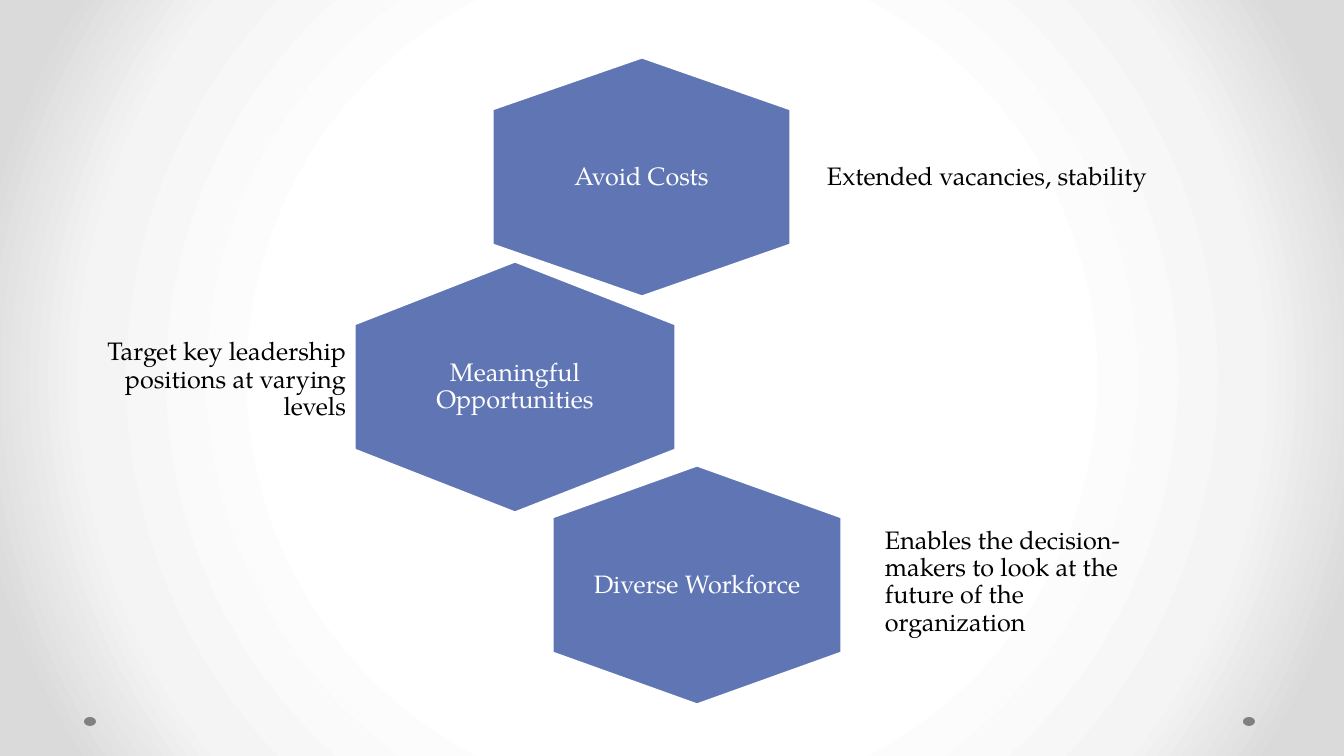
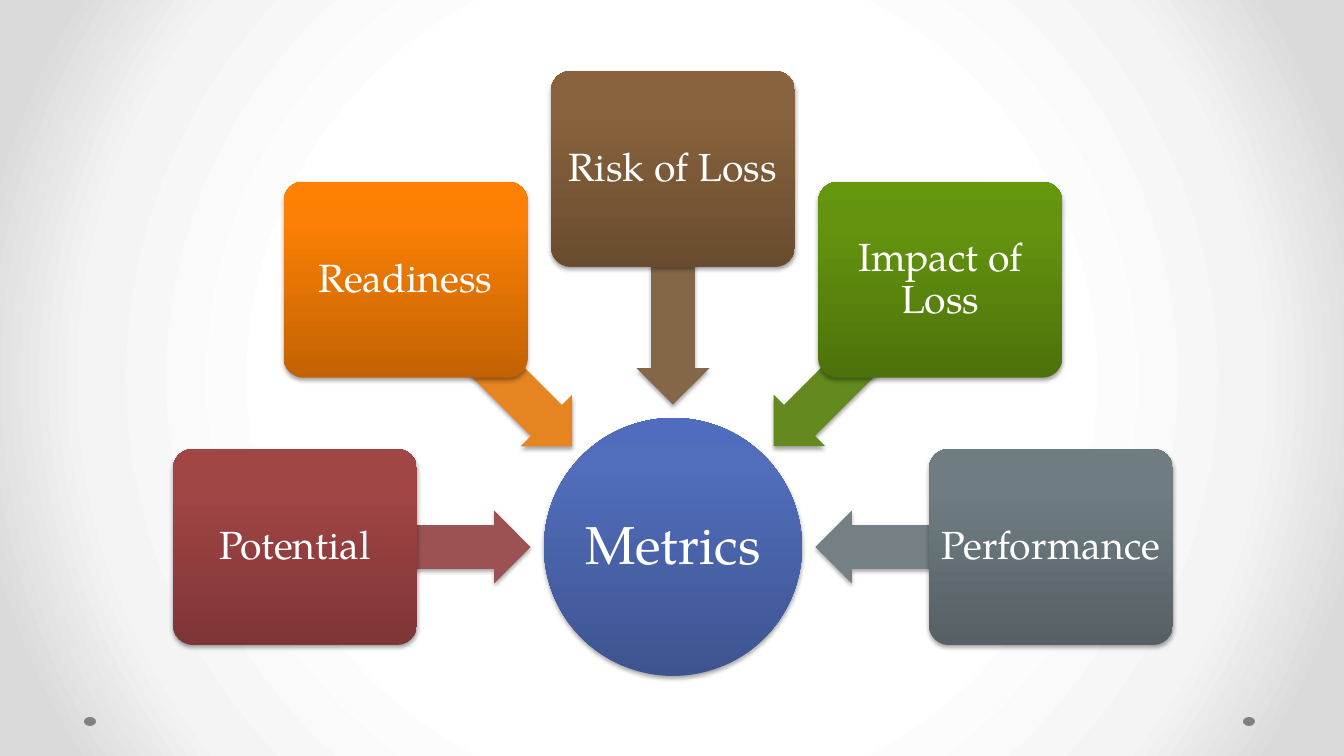
import math
from dataclasses import dataclass

import lxml.etree
import pptx
import pptx.dml.color
import pptx.enum.shapes
import pptx.enum.text
import pptx.oxml.ns
import pptx.util

EMU_PER_PX = 914400 / 100.8
SHAPE = pptx.enum.shapes.MSO_SHAPE
ALIGN = pptx.enum.text.PP_ALIGN
qn = pptx.oxml.ns.qn


@dataclass(frozen=True)
class Theme:
    font: str = "TeX Gyre Pagella"
    white: str = "FFFFFF"
    ink: str = "000000"
    dot: str = "808080"
    hexagon: str = "6076B4"
    backdrop: tuple = ((50, "FFFFFF"), (76, "F4F4F4"), (92, "DADADA"))
    hub: tuple = ((0, "3E5490"), (80, "516DBB"), (100, "4F6CBE"))
    body_size: int = 18
    box_size: int = 28
    hub_size: int = 38


def px(length):
    return pptx.util.Emu(round(length * EMU_PER_PX))


def rgb(code):
    return pptx.dml.color.RGBColor.from_string(code)


def add_xml(parent, tag, **attributes):
    return lxml.etree.SubElement(parent, qn(tag), {k: str(v) for k, v in attributes.items()})


class Deck:
    """Holds the style and the slide being drawn."""

    def __init__(self, theme):
        self.theme = theme
        self.slide = None
        self.prs = pptx.Presentation()
        self.prs.slide_width, self.prs.slide_height = px(1344), px(756)
        master = self.prs.slide_master
        self.gradient(master.background.fill, master.element, theme.backdrop, radial=True)

    def new_slide(self):
        self.slide = self.prs.slides.add_slide(self.prs.slide_layouts[6])
        for left in (84, 1243):
            self.shape(SHAPE.OVAL, left, 717, 12, 9, self.theme.dot)

    def gradient(self, fill, owner, stops, radial=False):
        fill.gradient()
        grad = next(owner.iter(qn("a:gradFill")))
        for child in list(grad):
            grad.remove(child)
        stop_list = add_xml(grad, "a:gsLst")
        for position, color in stops:
            stop = add_xml(stop_list, "a:gs", pos=position * 1000)
            add_xml(stop, "a:srgbClr", val=color)
        if radial:
            circle = add_xml(grad, "a:path", path="circle")
            add_xml(circle, "a:fillToRect", l=50000, t=50000, r=50000, b=50000)
        else:
            add_xml(grad, "a:lin", ang=270 * 60000, scaled=0)

    def paint(self, shape, fill):
        """Fill with one colour, or with a gradient given as stops."""
        shape.shadow.inherit = False
        shape.line.fill.background()
        if isinstance(fill, str):
            shape.fill.solid()
            shape.fill.fore_color.rgb = rgb(fill)
        else:
            self.gradient(shape.fill, shape.element, fill)

    def shape(self, kind, left, top, width, height, fill):
        shape = self.slide.shapes.add_shape(kind, px(left), px(top), px(width), px(height))
        self.paint(shape, fill)
        return shape

    def raised(self, kind, center, size, fill):
        """A shape placed by its centre, with a soft shadow below it."""
        (x, y), (width, height) = center, size
        shape = self.shape(kind, x - width / 2, y - height / 2, width, height, fill)
        effects = shape.element.spPr.find(qn("a:effectLst"))
        shadow = add_xml(effects, "a:outerShdw", blurRad=39370, dist=22860,
                         dir=90 * 60000, rotWithShape=0)
        color = add_xml(shadow, "a:srgbClr", val=self.theme.ink)
        add_xml(color, "a:alpha", val=35000)
        return shape

    def label(self, shape, text, size, color, align=ALIGN.CENTER, inset=(5, 5)):
        frame = shape.text_frame
        frame.text = text
        frame.word_wrap = True
        frame.vertical_anchor = pptx.enum.text.MSO_ANCHOR.MIDDLE
        frame.margin_left = frame.margin_right = px(inset[0])
        frame.margin_top = frame.margin_bottom = px(inset[1])
        paragraph = frame.paragraphs[0]
        paragraph.alignment = align
        paragraph.line_spacing = 0.9
        font = paragraph.runs[0].font
        font.name, font.size, font.color.rgb = self.theme.font, pptx.util.Pt(size), rgb(color)

    def hexagon(self, text, left, top, width, height, shoulder):
        middle, right, bottom = left + width / 2, left + width, top + height
        builder = self.slide.shapes.build_freeform(middle, top, scale=EMU_PER_PX)
        builder.add_line_segments([
            (right, top + shoulder), (right, bottom - shoulder), (middle, bottom),
            (left, bottom - shoulder), (left, top + shoulder)])
        hexagon = builder.convert_to_shape()
        self.paint(hexagon, self.theme.hexagon)
        hexagon.line.color.rgb = rgb(self.theme.white)
        hexagon.line.width = pptx.util.Pt(2.25)
        self.label(hexagon, text, self.theme.body_size, self.theme.white, inset=(38, 45))

    def caption(self, text, left, top, width, align):
        caption = self.slide.shapes.add_textbox(px(left), px(top), px(width), px(144))
        self.label(caption, text, self.theme.body_size, self.theme.ink, align, (7, 7))


def benefits_slide(deck):
    deck.new_slide()
    # Each benefit: hexagon, then its caption beside it
    benefits = [
        ("Avoid Costs", (492, 57, 299, 240, 52),
         "Extended vacancies, stability", (820, 105, 392), ALIGN.LEFT),
        ("Meaningful Opportunities", (354, 261, 322, 252, 63),
         "Target key leadership positions at varying levels", (66, 308, 287), ALIGN.RIGHT),
        ("Diverse Workforce", (552, 465, 290, 240, 52),
         "Enables the decision-makers to look at the future of the organization",
         (878, 510, 297), ALIGN.LEFT),
    ]
    for benefit, outline, detail, place, align in benefits:
        deck.hexagon(benefit, *outline)
        deck.caption(detail, *place, align)


def metrics_slide(deck):
    theme = deck.theme
    deck.new_slide()
    # Hub
    hub_x, hub_y = 673, 547
    hub = deck.raised(SHAPE.OVAL, (hub_x, hub_y), (258, 258), theme.hub)
    deck.label(hub, "Metrics", theme.hub_size, theme.white, inset=(3, 3))

    # Metrics on a half circle, each with an arrow towards the hub
    metrics = [
        ("Potential", "9C5252", ("7D3535", "A24545", "A44343")),
        ("Readiness", "E68422", ("C26203", "FB8004", "FF8002")),
        ("Risk of Loss", "846648", ("694C2F", "89633D", "8B633C")),
        ("Impact of Loss", "63891F", ("4D720B", "64940F", "65970C")),
        ("Performance", "758085", ("566065", "6F7D83", "6F7E84")),
    ]

    def on_circle(radius, angle):
        turn = math.radians(angle)
        return hub_x + radius * math.cos(turn), hub_y + radius * math.sin(turn)

    for index, (metric, arrow_color, shades) in enumerate(metrics):
        angle = 180 + 45 * index
        arrow = deck.raised(SHAPE.LEFT_ARROW, on_circle(260, angle), (235, 73), arrow_color)
        arrow.adjustments[0], arrow.adjustments[1] = 0.6, 0.5
        arrow.rotation = angle % 360
        box = deck.raised(SHAPE.ROUNDED_RECTANGLE, on_circle(378, angle), (244, 196),
                          tuple(zip((0, 80, 100), shades)))
        box.adjustments[0] = 0.1
        deck.label(box, metric, theme.box_size, theme.white)


def main():
    deck = Deck(Theme())
    benefits_slide(deck)
    metrics_slide(deck)
    deck.prs.save("out.pptx")


if __name__ == "__main__":
    main()
